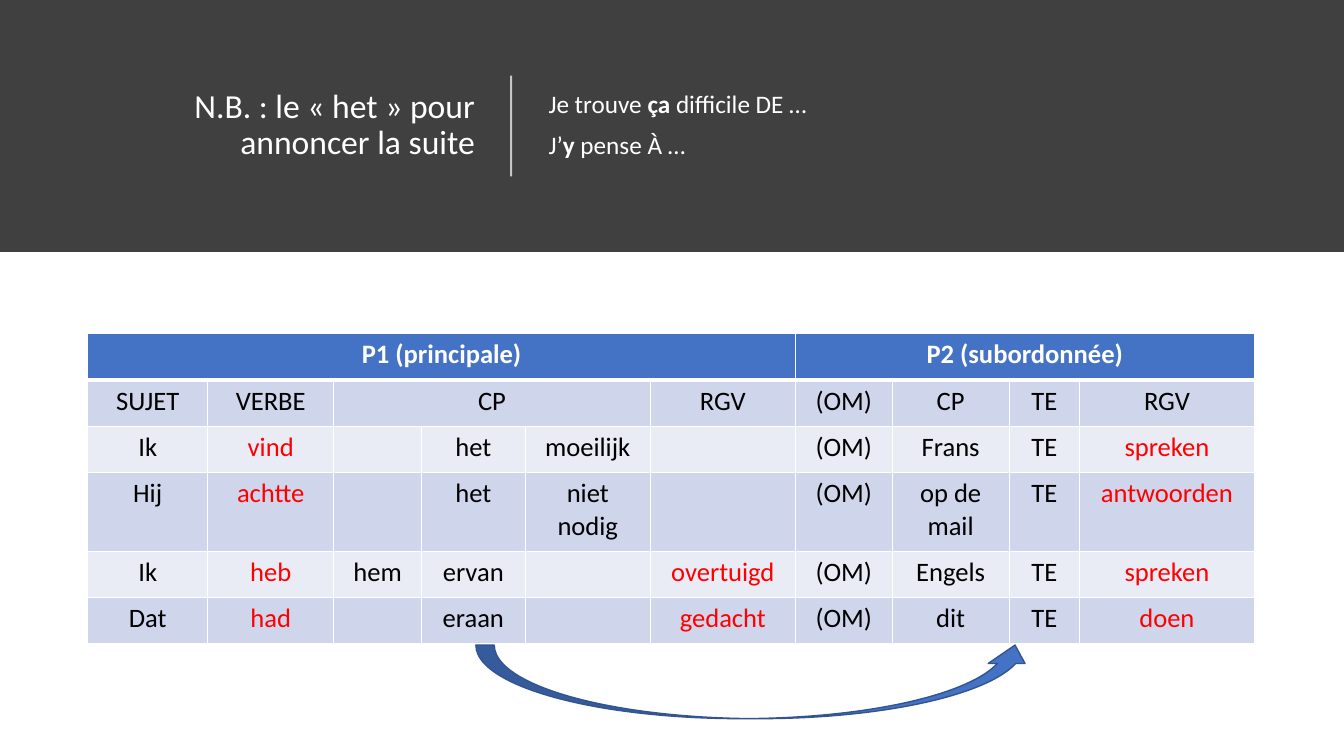
import dataclasses

import lxml.etree
import pptx
import pptx.dml.color
import pptx.enum.shapes
import pptx.enum.text
import pptx.oxml.ns
import pptx.util

Inches = pptx.util.Inches
Pt = pptx.util.Pt
qn = pptx.oxml.ns.qn
ALIGN = pptx.enum.text.PP_ALIGN


@dataclasses.dataclass(frozen=True)
class Theme:
    font: str = "Calibri"
    banner: str = "404040"
    light: str = "FFFFFF"
    dark: str = "000000"
    accent: str = "4472C4"
    accent_line: str = "325491"
    verb: str = "FF0000"
    bands: tuple = ("E9EBF5", "CFD5EA")
    title_size: float = 24
    body_size: float = 18
    table_size: float = 19


THEME = Theme()

TITLE = "N.B. : le «\u00a0het\u00a0» pour annoncer la suite"
EXAMPLES = [
    [("Je trouve ", False), ("ça", True), (" difficile DE …", False)],
    [("J’", False), ("y ", True), ("pense À …", False)],
]
COLUMN_WIDTHS = [1.19, 1.25, 0.87, 1.03, 1.24, 1.44, 0.96, 1.16, 0.7, 1.73]
ROW_HEIGHTS = [0.46, 0.46, 0.46, 0.78, 0.46, 0.46]
ROWS = [
    ["P1 (principale)", "", "", "", "", "", "P2 (subordonnée)", "", "", ""],
    ["SUJET", "VERBE", "CP", "", "", "RGV", "(OM)", "CP", "TE", "RGV"],
    ["Ik", "vind", "", "het", "moeilijk", "", "(OM)", "Frans", "TE", "spreken"],
    ["Hij", "achtte", "", "het", "niet nodig", "", "(OM)", "op de mail", "TE", "antwoorden"],
    ["Ik", "heb", "hem", "ervan", "", "overtuigd", "(OM)", "Engels", "TE", "spreken"],
    ["Dat", "had", "", "eraan", "", "gedacht", "(OM)", "dit", "TE", "doen"],
]
MERGES = [(0, 0, 5), (0, 6, 9), (1, 2, 4)]
VERB_COLUMNS = (1, 5, 9)


def rgb(color):
    return pptx.dml.color.RGBColor.from_string(color)


def format_font(font, size, color, bold=False):
    font.name = THEME.font
    font.size = Pt(size)
    font.bold = bold
    font.color.rgb = rgb(color)


def place(shape, left, top, width, height):
    shape.left, shape.top = Inches(left), Inches(top)
    shape.width, shape.height = Inches(width), Inches(height)
    text_frame = shape.text_frame
    text_frame.word_wrap = True
    text_frame.auto_size = pptx.enum.text.MSO_AUTO_SIZE.NONE
    text_frame.vertical_anchor = pptx.enum.text.MSO_ANCHOR.MIDDLE


def fill_title(title):
    place(title, 0.87, 0.52, 3.94, 1.45)
    title.text_frame.text = TITLE
    paragraph = title.text_frame.paragraphs[0]
    paragraph.alignment = ALIGN.RIGHT
    paragraph.line_spacing = 0.9
    format_font(paragraph.runs[0].font, THEME.title_size, THEME.light)


def fill_examples(body):
    place(body, 5.34, 0.45, 7.12, 1.6)
    text_frame = body.text_frame
    text_frame.text = "\n".join("".join(text for text, bold in example) for example in EXAMPLES)
    for paragraph, example in zip(text_frame.paragraphs, EXAMPLES):
        paragraph.clear()
        paragraph.line_spacing = 0.9
        paragraph.space_before = Pt(10)
        properties = paragraph._p.get_or_add_pPr()
        properties.set("marL", "0")
        properties.set("indent", "0")
        lxml.etree.SubElement(properties, qn("a:buNone"))
        for text, bold in example:
            run = paragraph.add_run()
            run.text = text
            format_font(run.font, THEME.body_size, THEME.light, bold)


def add_filled_shape(slide, kind, left, top, width, height, color, line_color=None):
    shape = slide.shapes.add_shape(kind, Inches(left), Inches(top), Inches(width), Inches(height))
    shape.shadow.inherit = False
    shape.fill.solid()
    shape.fill.fore_color.rgb = rgb(color)
    if line_color:
        shape.line.color.rgb = rgb(line_color)
        shape.line.width = Pt(1)
    else:
        shape.line.fill.background()
    return shape


def add_banner(slide):
    banner = add_filled_shape(
        slide, pptx.enum.shapes.MSO_SHAPE.RECTANGLE, 0, 0, 13.33, 2.5, THEME.banner
    )
    element = banner._element
    element.getparent().insert(2, element)


def add_divider(slide):
    divider = slide.shapes.add_connector(
        pptx.enum.shapes.MSO_CONNECTOR.STRAIGHT,
        Inches(5.07), Inches(1.75), Inches(5.07), Inches(0.75),
    )
    divider.line.color.rgb = rgb(THEME.light)
    divider.line.width = Pt(1.5)
    properties = divider._element.spPr
    color = properties.find(".//" + qn("a:srgbClr"))
    lxml.etree.SubElement(color, qn("a:alpha")).set("val", "70000")
    lxml.etree.SubElement(properties, qn("a:effectLst"))


def add_borders(cell, widths):
    properties = cell._tc.get_or_add_tcPr()
    for side, width in widths.items():
        border = lxml.etree.SubElement(properties, qn(f"a:ln{side}"), w=str(Pt(width)))
        fill = lxml.etree.SubElement(border, qn("a:solidFill"))
        lxml.etree.SubElement(fill, qn("a:srgbClr"), val=THEME.light)


def format_cell(cell, text, row, column):
    header = row == 0
    add_borders(cell, {"L": 1, "R": 1, "T": 3 if row == 1 else 1, "B": 3 if header else 1})
    cell.fill.solid()
    cell.fill.fore_color.rgb = rgb(THEME.accent if header else THEME.bands[row % 2])
    cell.margin_left = cell.margin_right = Inches(0.11)
    cell.margin_top = cell.margin_bottom = Inches(0.05)
    if not text:
        return
    cell.text_frame.text = text
    paragraph = cell.text_frame.paragraphs[0]
    paragraph.alignment = ALIGN.CENTER
    is_verb = row > 1 and column in VERB_COLUMNS
    color = THEME.light if header else THEME.verb if is_verb else THEME.dark
    format_font(paragraph.runs[0].font, THEME.table_size, color, header)


def add_sentence_table(slide):
    table = slide.shapes.add_table(
        len(ROWS), len(COLUMN_WIDTHS), Inches(0.87), Inches(3.31), Inches(11.59), Inches(3.09)
    ).table
    for column, width in zip(table.columns, COLUMN_WIDTHS):
        column.width = Inches(width)
    for row, height in zip(table.rows, ROW_HEIGHTS):
        row.height = Inches(height)
    for row, first, last in MERGES:
        table.cell(row, first).merge(table.cell(row, last))
    for row, texts in enumerate(ROWS):
        for column, text in enumerate(texts):
            format_cell(table.cell(row, column), text, row, column)


def main():
    presentation = pptx.Presentation()
    presentation.slide_width = Inches(13.33)
    presentation.slide_height = Inches(7.5)
    slide = presentation.slides.add_slide(presentation.slide_layouts[1])
    add_banner(slide)
    fill_title(slide.shapes.title)
    fill_examples(slide.placeholders[1])
    add_divider(slide)
    add_sentence_table(slide)
    add_filled_shape(
        slide, pptx.enum.shapes.MSO_SHAPE.CURVED_UP_ARROW,
        4.72, 6.4, 5.53, 0.73, THEME.accent, THEME.accent_line,
    )
    presentation.save("out.pptx")


if __name__ == "__main__":
    main()
